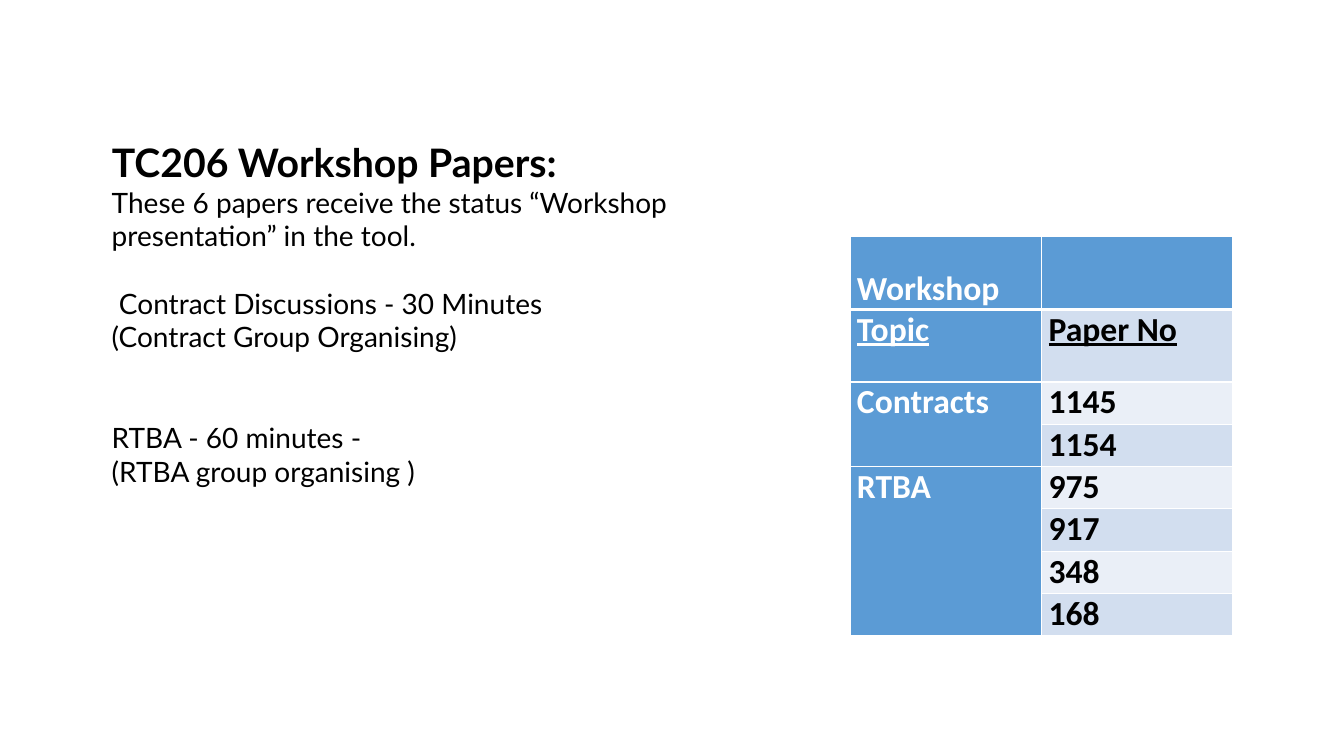
from pptx import Presentation
from pptx.dml.color import RGBColor
from pptx.enum.text import MSO_ANCHOR, MSO_AUTO_SIZE, PP_ALIGN
from pptx.util import Inches, Pt
from lxml import etree

TOP, BOTTOM = MSO_ANCHOR.TOP, MSO_ANCHOR.BOTTOM
FIXED = MSO_AUTO_SIZE.NONE
LEFT = PP_ALIGN.LEFT
NS = "http://schemas.openxmlformats.org/drawingml/2006/main"
COLORS = {"ink": "000000", "white": "FFFFFF", "blue": "5B9BD5",
          "mid": "D2DEEF", "pale": "EAEFF7"}


def style(para, face, size, color, bold):
    font = para.font
    font.name, font.size, font.bold = face, Pt(size), bold
    font.color.rgb = RGBColor.from_string(COLORS[color])


def add_edge(cell, side, width):
    props = cell._tc.get_or_add_tcPr()
    line = etree.SubElement(props, f"{{{NS}}}ln{side}", w=str(Pt(width)))
    fill = etree.SubElement(line, f"{{{NS}}}solidFill")
    etree.SubElement(fill, f"{{{NS}}}srgbClr", val=COLORS["white"])


prs = Presentation()
prs.slide_width, prs.slide_height = Inches(13.33), Inches(7.5)
slide = prs.slides.add_slide(prs.slide_layouts[5])

title = slide.shapes.title
title.left, title.top = Inches(1.01), Inches(1.32)
title.width, title.height = Inches(6.82), Inches(0.57)
frame = title.text_frame
frame.text = "TC206 Workshop Papers:"
frame.auto_size, frame.vertical_anchor = FIXED, TOP
frame.paragraphs[0].alignment = LEFT
style(frame.paragraphs[0], "Lato", 28, "ink", True)

notes = [
    ("These 6 papers receive the status “Workshop presentation” in the tool.", 0),
    (" Contract Discussions - 30 Minutes", 24),
    ("(Contract Group Organising)", 0),
    ("RTBA - 60 minutes -", 48),
    ("(RTBA group organising )", 0),
]
body = slide.shapes.add_textbox(Inches(1.01), Inches(1.79), Inches(6.82), Inches(3.47))
frame = body.text_frame
frame.word_wrap = True
for i, (text, gap) in enumerate(notes):
    para = frame.add_paragraph() if i else frame.paragraphs[0]
    para.text = text
    if gap:
        para.space_before = Pt(gap)
    style(para, "Lato", 20, "ink", False)

rows = [
    ("Workshop", ""), ("Topic", "Paper No"),
    ("Contracts", "1145"), ("", "1154"),
    ("RTBA", "975"), ("", "917"), ("", "348"), ("", "168"),
]
table = slide.shapes.add_table(len(rows), 2, Inches(8.43), Inches(2.35),
                               Inches(3.8), Inches(3.96)).table
for col in table.columns:
    col.width = Inches(1.9)
for r, row in enumerate(rows):
    table.rows[r].height = Inches(0.72 if r < 2 else 0.42)
    for c, text in enumerate(row):
        cell = table.cell(r, c)
        cell.margin_left = cell.margin_right = Inches(0.07)
        cell.margin_top = cell.margin_bottom = 0
        cell.vertical_anchor = BOTTOM if r == 0 else TOP
        for side in "LRTB":
            thick = (r == 0 and side == "B") or (r == 1 and side == "T")
            add_edge(cell, side, 3 if thick else 1)
        dark = r == 0 or c == 0
        shade = "blue" if dark else "mid" if r % 2 else "pale"
        cell.fill.solid()
        cell.fill.fore_color.rgb = RGBColor.from_string(COLORS[shade])
        cell.text = text
        para = cell.text_frame.paragraphs[0]
        style(para, "Calibri", 24, "white" if dark else "ink", True)
        para.font.underline = r == 1
for first, last in [(2, 3), (4, 7)]:
    table.cell(first, 0).merge(table.cell(last, 0))

prs.save("out.pptx")
